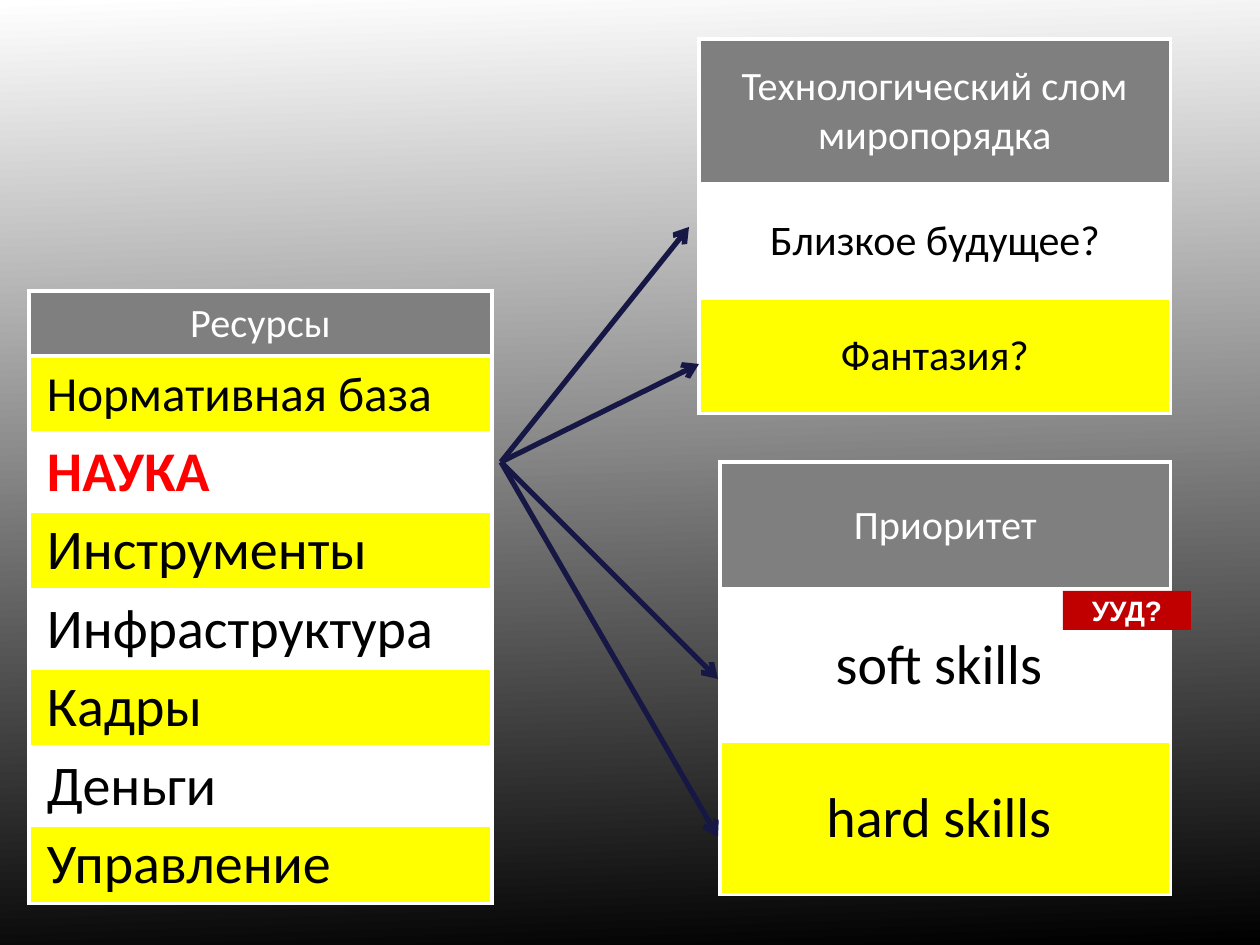
from lxml import etree
from pptx import Presentation
from pptx.dml.color import RGBColor
from pptx.enum.shapes import MSO_CONNECTOR, MSO_SHAPE
from pptx.enum.text import MSO_ANCHOR, PP_ALIGN
from pptx.oxml.ns import qn
from pptx.util import Emu, Pt

SCALE = 914400 // 126  # EMU per px
INSET = 5
SPACED_INSET = 18

WHITE = RGBColor(0xFF, 0xFF, 0xFF)
BLACK = RGBColor(0x00, 0x00, 0x00)
GRAY = RGBColor(0x7F, 0x7F, 0x7F)
YELLOW = RGBColor(0xFF, 0xFF, 0x00)
RED = RGBColor(0xFF, 0x00, 0x00)
DARK_RED = RGBColor(0xC0, 0x00, 0x00)
NAVY = RGBColor(0x17, 0x17, 0x45)


def px(n):
    return Emu(n * SCALE)


def set_background(s):
    fill = s.background.fill
    fill.gradient()
    fill.gradient_angle = 272  # counter-clockwise: white top to black bottom
    for stop, color, position in zip(fill.gradient_stops, (WHITE, BLACK), (0, 1)):
        stop.color.rgb = color
        stop.position = position


def add_run(p, text, size, color, font="Calibri", bold=False):
    r = p.add_run()
    r.text = text
    r.font.size = Pt(size)
    r.font.name = font
    r.font.bold = bold
    r.font.color.rgb = color


def add_borders(cell):
    """Put white 2 pt lines on all sides; they must precede the cell fill."""
    tc_pr = cell._tc.get_or_add_tcPr()
    for i, side in enumerate(("a:lnL", "a:lnR", "a:lnT", "a:lnB")):
        ln = etree.Element(qn(side), w=str(Pt(2)))
        solid = etree.SubElement(ln, qn("a:solidFill"))
        etree.SubElement(solid, qn("a:srgbClr"), val=str(WHITE))
        tc_pr.insert(i, ln)


def fill_cell(cell, text, size, fill, color=BLACK, align=PP_ALIGN.CENTER,
              bold=False, left=INSET, right=INSET):
    cell.fill.solid()
    cell.fill.fore_color.rgb = fill
    cell.vertical_anchor = MSO_ANCHOR.MIDDLE
    cell.margin_left, cell.margin_right = px(left), px(right)
    cell.margin_top = cell.margin_bottom = px(INSET)
    p = cell.text_frame.paragraphs[0]
    p.alignment = align
    add_run(p, text, size, color, bold=bold)
    add_borders(cell)


def add_list_table(s, x, y, w, header, header_h, row_h, rows, fills, **style):
    """One column: gray header, then rows of (text, size, overrides)."""
    h = header_h + row_h * len(rows)
    table = s.shapes.add_table(len(rows) + 1, 1, px(x), px(y), px(w), px(h)).table
    table.horz_banding = False
    table.columns[0].width = px(w)
    table.rows[0].height = px(header_h)
    fill_cell(table.cell(0, 0), header, 23, GRAY, WHITE)
    for i, (text, size, extra) in enumerate(rows):
        table.rows[i + 1].height = px(row_h)
        fill_cell(table.cell(i + 1, 0), text, size, fills[i % 2], **style, **extra)


def add_arrow(s, start, end):
    line = s.shapes.add_connector(MSO_CONNECTOR.STRAIGHT,
                                  *map(px, start), *map(px, end))
    line.line.color.rgb = NAVY
    line.line.width = Pt(3)
    etree.SubElement(line.line._get_or_add_ln(), qn("a:tailEnd"), type="arrow")
    etree.SubElement(line._element.spPr, qn("a:effectLst"))


def add_tag(s, x, y, w, h, text):
    sp = s.shapes.add_shape(MSO_SHAPE.RECTANGLE, px(x), px(y), px(w), px(h))
    sp.shadow.inherit = False
    sp.fill.solid()
    sp.fill.fore_color.rgb = DARK_RED
    sp.line.fill.background()
    tf = sp.text_frame
    tf.word_wrap = True
    tf.vertical_anchor = MSO_ANCHOR.MIDDLE
    p = tf.paragraphs[0]
    p.alignment = PP_ALIGN.CENTER
    add_run(p, text, 16, WHITE, font="Arial", bold=True)


def main():
    prs = Presentation()
    prs.slide_width, prs.slide_height = px(1260), px(945)
    s = prs.slides.add_slide(prs.slide_layouts[6])
    set_background(s)

    # Resources
    resources = [("Нормативная база", 28, {}),
                 ("НАУКА", 32, {"color": RED, "bold": True})]
    resources += [(text, 32, {}) for text in (
        "Инструменты", "Инфраструктура", "Кадры", "Деньги", "Управление")]
    add_list_table(s, 29, 291, 463, "Ресурсы", 65, 77, resources,
                   (YELLOW, WHITE), align=PP_ALIGN.LEFT, left=SPACED_INSET)

    # Outcomes
    add_list_table(s, 699, 39, 472, "Технологический слом миропорядка", 145, 115,
                   [("Близкое будущее?", 24, {}), ("Фантазия?", 24, {})],
                   (WHITE, YELLOW))
    add_list_table(s, 720, 462, 451, "Приоритет", 127, 153,
                   [("soft skills", 32, {}), ("hard skills", 32, {})],
                   (WHITE, YELLOW), right=SPACED_INSET)

    # Arrows from resources to each outcome
    for end in ((689, 227), (699, 364), (718, 679), (718, 837)):
        add_arrow(s, (501, 462), end)

    add_tag(s, 1063, 591, 128, 39, "УУД?")
    prs.save("out.pptx")


if __name__ == "__main__":
    main()
